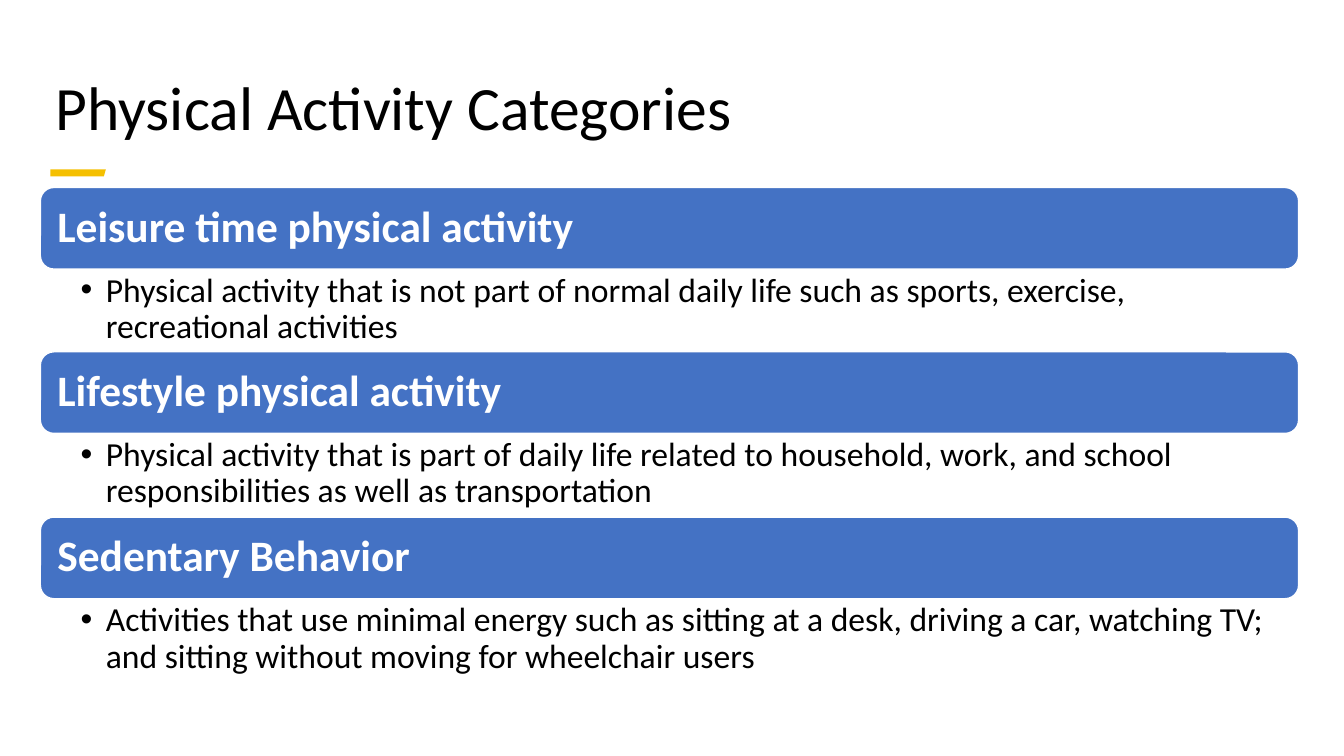
"""Build the slide on physical activity categories."""
from pptx import Presentation
from pptx import util as u
from pptx.dml.color import RGBColor
from pptx.enum import shapes, text
from pptx.oxml import parse_xml
from pptx.oxml.ns import nsdecls

PX = 9144
FONT = "Calibri"
BLACK, WHITE, BLUE, YELLOW = "000000", "FFFFFF", "4472C4", "F5C001"
CATEGORIES = [
    ("Leisure time physical activity",
     "Physical activity that is not part of normal daily life such as sports, "
     "exercise, recreational activities"),
    ("Lifestyle physical activity",
     "Physical activity that is part of daily life related to household, work, "
     "and school responsibilities as well as transportation"),
    ("Sedentary Behavior",
     "Activities that use minimal energy such as sitting at a desk, driving a "
     "car, watching TV; and sitting without moving for wheelchair users"),
]


def px(*lengths):
    """Turn pixel lengths into EMU."""
    return [u.Emu(length * PX) for length in lengths]


def paint(fill, colour):
    """Give a fill one solid colour."""
    fill.solid()
    fill.fore_color.rgb = RGBColor.from_string(colour)


def write(shape, words, size, colour, insets, anchor, bold=False):
    """Set and format the text of a shape and return its paragraph."""
    frame = shape.text_frame
    frame.text = words
    frame.word_wrap = True
    frame.auto_size = text.MSO_AUTO_SIZE.NONE
    frame.vertical_anchor = anchor
    (frame.margin_left, frame.margin_top,
     frame.margin_right, frame.margin_bottom) = px(*insets)
    para = frame.paragraphs[0]
    para.alignment = text.PP_ALIGN.LEFT
    para.line_spacing = 0.9
    font = para.runs[0].font
    font.name, font.size, font.bold = FONT, u.Pt(size), bold
    font.color.rgb = RGBColor.from_string(colour)
    return para


def add_bullet(para, indent):
    """Give a paragraph a round bullet with a hanging indent."""
    props = para._p.get_or_add_pPr()
    props.set("marL", str(indent * PX))
    props.set("indent", str(-indent * PX))
    props.append(parse_xml(f'<a:buFont {nsdecls("a")} typeface="Arial"/>'))
    props.append(parse_xml(f'<a:buChar {nsdecls("a")} char="•"/>'))


def add_heading(page, left, top, width, height):
    """Place the title and the slanted accent near its lower edge."""
    title = page.shapes.title
    title.left, title.top, title.width, title.height = px(left, top, width, height)
    write(title, "Physical Activity Categories", 44, BLACK, (10, 5, 10, 5),
          text.MSO_ANCHOR.MIDDLE)
    x, y = left + 5, top + 131
    builder = page.shapes.build_freeform(x, y, scale=PX)
    builder.add_line_segments([(x + 55, y), (x + 53, y + 7), (x, y + 7)], close=True)
    accent = builder.convert_to_shape()
    accent.shadow.inherit = False
    paint(accent.fill, YELLOW)
    accent.line.fill.background()


def add_category(page, name, detail, left, top, width, height):
    """Place a coloured bar with its name and the bulleted detail below."""
    bar_height = 81
    bar = page.shapes.add_shape(shapes.MSO_SHAPE.ROUNDED_RECTANGLE,
                                *px(left, top, width, bar_height))
    bar.shadow.inherit = False
    paint(bar.fill, BLUE)
    paint(bar.line.fill, WHITE)
    bar.line.width = u.Pt(1)
    write(bar, name, 31, WHITE, (13, 9, 13, 9), text.MSO_ANCHOR.MIDDLE, bold=True)
    box = page.shapes.add_textbox(
        *px(left, top + bar_height, width, height - bar_height))
    para = write(box, detail, 24, BLACK, (40, 4, 24, 4), text.MSO_ANCHOR.TOP)
    add_bullet(para, 25)


def add_categories(page, left, top, width, height):
    """Stack the categories evenly in a box."""
    count = len(CATEGORIES)
    for index, (name, detail) in enumerate(CATEGORIES):
        add_category(page, name, detail, left, top + index * height // count,
                     width, height // count)


def main():
    """Create the deck and save it."""
    deck = Presentation()
    deck.slide_width, deck.slide_height = px(1333, 750)
    page = deck.slides.add_slide(deck.slide_layouts[5])
    paint(page.background.fill, WHITE)
    add_heading(page, 45, 37, 1150, 145)
    add_categories(page, 40, 186, 1248, 491)
    deck.save("out.pptx")


if __name__ == "__main__":
    main()
